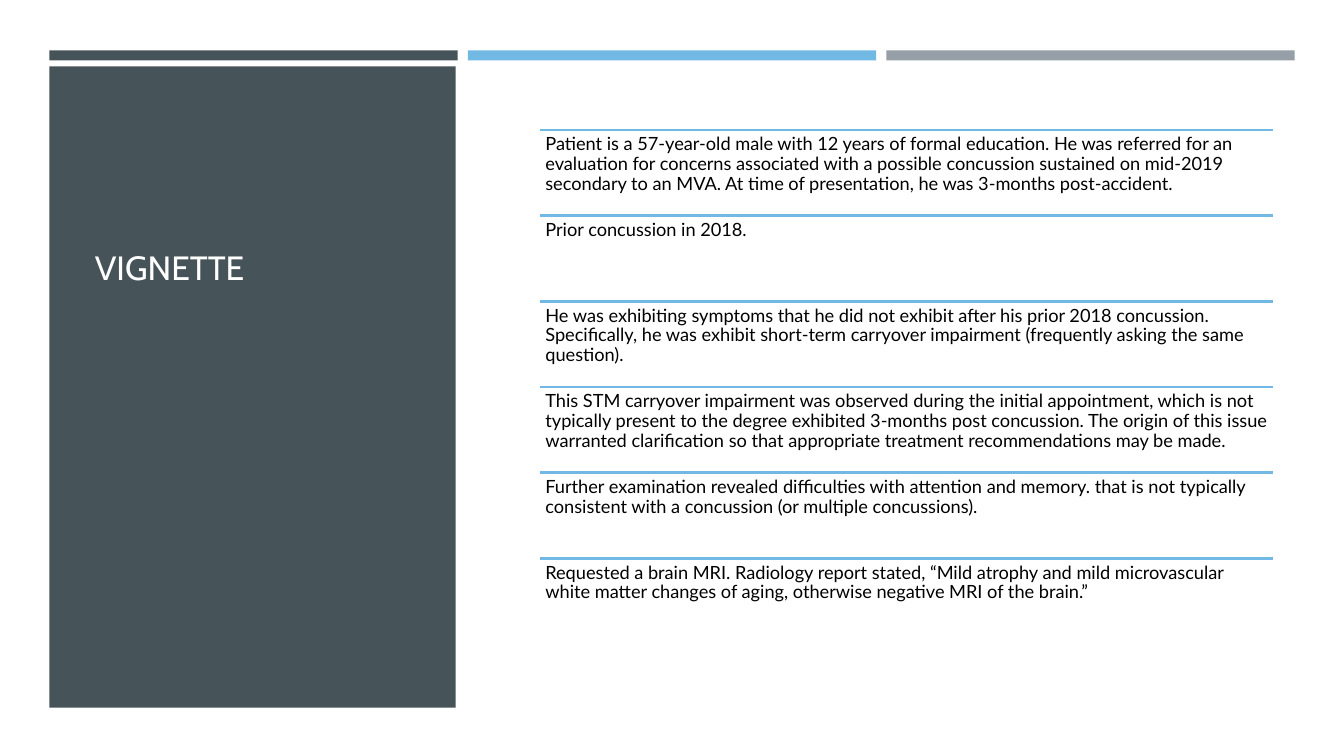
from pptx import Presentation
from pptx.dml.color import RGBColor
from pptx.enum.shapes import MSO_CONNECTOR, MSO_SHAPE
from pptx.enum.text import MSO_ANCHOR, PP_ALIGN
from pptx.oxml.ns import qn
from pptx.util import Inches, Pt
from lxml.etree import SubElement

SLATE = RGBColor(0x46, 0x53, 0x59)
BLUE = RGBColor(0x71, 0xB9, 0xE4)
GRAY = RGBColor(0x96, 0x9F, 0xA7)
WHITE = RGBColor(0xFF, 0xFF, 0xFF)
BLACK = RGBColor(0x00, 0x00, 0x00)

BAR_LEFT, BAR_TOP, BAR_WIDTH, BAR_PITCH = 0.49, 0.5, 4.05, 4.15
ROW_LEFT, ROW_TOP, ROW_WIDTH, ROW_HEIGHT = 5.36, 1.29, 7.27, 0.85

FINDINGS = [
    "Patient is a 57-year-old male with 12 years of formal education. He was referred "
    "for an evaluation for concerns associated with a possible concussion sustained on "
    "mid-2019 secondary to an MVA. At time of presentation, he was 3-months post-accident.",
    "Prior concussion in 2018.",
    "He was exhibiting symptoms that he did not exhibit after his prior 2018 concussion. "
    "Specifically, he was exhibit short-term carryover impairment (frequently asking the "
    "same question).",
    "This STM carryover impairment was observed during the initial appointment, which is "
    "not typically present to the degree exhibited 3-months post concussion. The origin of "
    "this issue warranted clarification so that appropriate treatment recommendations may "
    "be made.",
    "Further examination revealed difficulties with attention and memory. that is not "
    "typically consistent with a concussion (or multiple concussions).",
    "Requested a brain MRI. Radiology report stated, “Mild atrophy and mild microvascular "
    "white matter changes of aging, otherwise negative MRI of the brain.”",
]


class VignetteSlide:
    """Holds the style and the current slide, and draws each kind of element."""

    title_font = "Cabin"
    body_font = "Lato"

    def __init__(self, slide):
        self.slide = slide

    def block(self, left, top, width, height, color):
        shape = self.slide.shapes.add_shape(
            MSO_SHAPE.RECTANGLE, Inches(left), Inches(top), Inches(width), Inches(height))
        shape.shadow.inherit = False
        shape.fill.solid()
        shape.fill.fore_color.rgb = color
        shape.line.fill.background()

    def title(self, text, left, top, width, height):
        shape = self.slide.shapes.title
        shape.left, shape.top = Inches(left), Inches(top)
        shape.width, shape.height = Inches(width), Inches(height)
        shape.element.getparent().append(shape.element)
        frame = shape.text_frame
        frame.text = text
        frame.word_wrap = True
        frame.vertical_anchor = MSO_ANCHOR.BOTTOM
        paragraph = frame.paragraphs[0]
        paragraph.alignment = PP_ALIGN.LEFT
        self.style(paragraph, self.title_font, 24, WHITE)

    def rule(self, left, top, width):
        connector = self.slide.shapes.add_connector(
            MSO_CONNECTOR.STRAIGHT, Inches(left), Inches(top),
            Inches(left + width), Inches(top))
        connector.line.color.rgb = BLUE
        connector.line.width = Pt(1.75)
        SubElement(connector.element.spPr, qn("a:effectLst"))

    def text(self, text, left, top, width, height):
        box = self.slide.shapes.add_textbox(
            Inches(left), Inches(top), Inches(width), Inches(height))
        frame = box.text_frame
        frame.word_wrap = True
        frame.margin_left = frame.margin_right = Inches(0.05)
        frame.margin_top = frame.margin_bottom = Inches(0.05)
        frame.text = text
        paragraph = frame.paragraphs[0]
        paragraph.line_spacing = 0.9
        self.style(paragraph, self.body_font, 13, BLACK)

    def style(self, paragraph, name, size, color):
        paragraph.font.name = name
        paragraph.font.size = Pt(size)
        paragraph.font.color.rgb = color


def main():
    presentation = Presentation()
    presentation.slide_width = Inches(13.33)
    presentation.slide_height = Inches(7.5)
    title_only = presentation.slide_layouts[5]
    vignette = VignetteSlide(presentation.slides.add_slide(title_only))

    for index, color in enumerate([SLATE, BLUE, GRAY]):
        vignette.block(BAR_LEFT + index * BAR_PITCH, BAR_TOP, BAR_WIDTH, 0.1, color)
    vignette.block(BAR_LEFT, 0.66, 4.03, 6.36, SLATE)
    vignette.title("VIGNETTE", 0.84, 1.02, 3.32, 1.88)

    for index, finding in enumerate(FINDINGS):
        top = ROW_TOP + index * ROW_HEIGHT
        vignette.rule(ROW_LEFT, top, ROW_WIDTH)
        vignette.text(finding, ROW_LEFT, top, ROW_WIDTH, ROW_HEIGHT)

    presentation.save("out.pptx")


if __name__ == "__main__":
    main()
